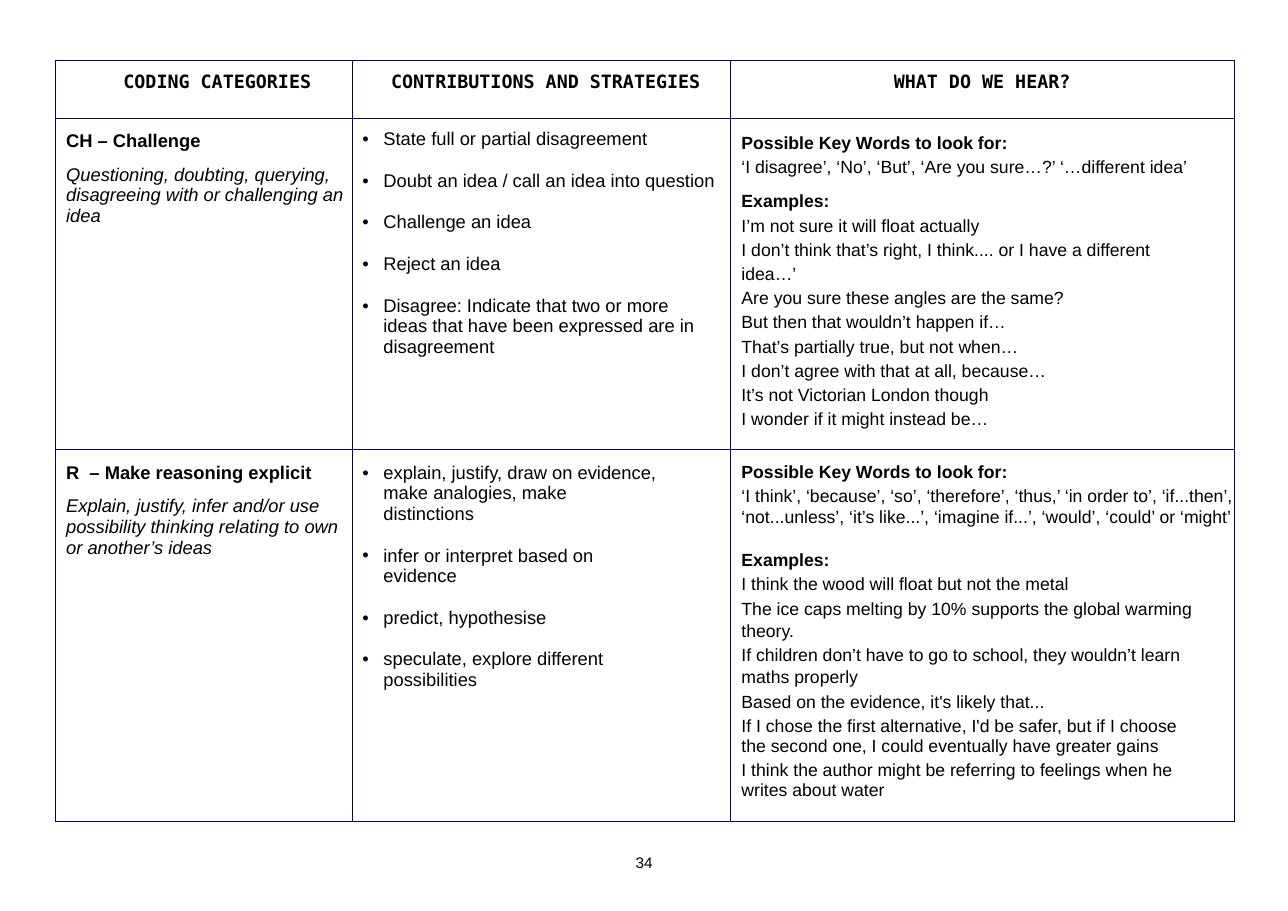
import copy
from dataclasses import dataclass

import pptx
import pptx.dml.color
import pptx.enum.text
import pptx.oxml.ns
import pptx.oxml.xmlchemy
import pptx.util
from lxml import etree
from pptx.util import Inches

qn = pptx.oxml.ns.qn
ALIGN = pptx.enum.text.PP_ALIGN


@dataclass(frozen=True)
class Theme:
    ink: str = "000000"
    rule: str = "000080"
    body_font: str = "Arial"
    heading_font: str = "DejaVu Sans Mono"
    body: float = 12
    speech: float = 11.5
    folio: float = 10


THEME = Theme()


def write(frame, text, size=THEME.body, font=THEME.body_font, bold=False, italic=False,
          align=ALIGN.LEFT, left=0.1, before=0, spacing=None, bullet=False):
    """Add one paragraph to a text frame; the first gets no space before."""
    first = not frame.text
    paragraph = frame.paragraphs[0] if first else frame.add_paragraph()
    paragraph.text = text
    paragraph.alignment = align
    properties = paragraph._p.get_or_add_pPr()
    properties.set("marL", str(Inches(left)))
    properties.set("indent", str(Inches(-0.19 if bullet else 0)))
    if bullet:
        etree.SubElement(properties, qn("a:buFont"), typeface=font)
        etree.SubElement(properties, qn("a:buChar"), char="•")
    paragraph.space_before = pptx.util.Pt(0 if first else before)
    if spacing:
        paragraph.line_spacing = spacing
    for run in paragraph.runs:
        run.font.size = pptx.util.Pt(size)
        run.font.name = font
        run.font.bold = bold
        run.font.italic = italic
        run.font.color.rgb = pptx.dml.color.RGBColor.from_string(THEME.ink)
    for line_break in paragraph._p.findall(qn("a:br")):
        line_break.append(copy.deepcopy(paragraph.runs[0]._r.rPr))


def rule_cell(cell):
    """Draw thin rules on the four sides of a cell."""
    properties = cell._tc.get_or_add_tcPr()
    for side in ("a:lnL", "a:lnR", "a:lnT", "a:lnB"):
        line = etree.SubElement(properties, qn(side), w=str(pptx.util.Pt(0.48)))
        fill = etree.SubElement(line, qn("a:solidFill"))
        etree.SubElement(fill, qn("a:srgbClr"), val=THEME.rule)


COLUMN_WIDTHS = [2.7, 3.43, 4.57]
ROW_HEIGHTS = [0.52, 3.01, 3.38]
TOP_INSETS = [[0.1, 0.1, 0.1], [0.12, 0.1, 0.14], [0.12, 0.12, 0.12]]

HEADINGS = [
    ("CODING CATEGORIES", ALIGN.LEFT, 0.62),
    ("CONTRIBUTIONS AND STRATEGIES", ALIGN.LEFT, 0.35),
    ("WHAT DO WE HEAR?", ALIGN.CENTER, 0),
]

# Key words and examples: (text, space before, line spacing)
CATEGORIES = [
    {
        "code": "CH – Challenge",
        "meaning": "Questioning, doubting, querying, disagreeing with or challenging an idea",
        "strategies": [
            "State full or partial disagreement",
            "Doubt an idea / call an idea into question",
            "Challenge an idea",
            "Reject an idea",
            "Disagree: Indicate that two or more \videas that have been expressed are in "
            "\vdisagreement",
        ],
        "key_words": [
            ("‘I disagree’, ‘No’, ‘But’, ‘Are you sure…?’ ‘…different idea’", 3.1, None),
        ],
        "examples_gap": 9.4,
        "examples": [("I’m not sure it will float actually", 3.3, None)] + [
            (sentence, 0.2, 1.22) for sentence in (
                "I don’t think that’s right, I think.... or I have a different \videa…’",
                "Are you sure these angles are the same?",
                "But then that wouldn’t happen if…",
                "That’s partially true, but not when…",
                "I don’t agree with that at all, because…",
                "It’s not Victorian London though",
                "I wonder if it might instead be…",
            )
        ],
    },
    {
        "code": "R  – Make reasoning explicit",
        "meaning": "Explain, justify, infer and/or use possibility thinking relating to own "
                   "or another’s ideas",
        "strategies": [
            "explain, justify, draw on evidence, \vmake analogies, make \vdistinctions",
            "infer or interpret based on \vevidence",
            "predict, hypothesise",
            "speculate, explore different \vpossibilities",
        ],
        "key_words": [
            ("‘I think’, ‘because’, ‘so’, ‘therefore’, ‘thus,’ ‘in order to’, ‘if...then’,",
             3, None),
            ("‘not...unless’, ‘it’s like...’, ‘imagine if...’, ‘would’, ‘could’ or ‘might’",
             0.6, None),
        ],
        "examples_gap": 15.3,
        "examples": [
            ("I think the wood will float but not the metal", 3.2, None),
            ("The ice caps melting by 10% supports the global warming \vtheory.", 1.6, 1.12),
            ("If children don’t have to go to school, they wouldn’t learn \vmaths properly",
             1.6, 1.12),
            ("Based on the evidence, it's likely that...", 1.6, 1.12),
            ("If I chose the first alternative, I'd be safer, but if I choose "
             "\vthe second one, I could eventually have greater gains", 2.4, 1.04),
            ("I think the author might be referring to feelings when he "
             "\vwrites about water", 2.1, 1.04),
        ],
    },
]

deck = pptx.Presentation()
deck.slide_width = Inches(11.69)
deck.slide_height = Inches(8.27)
slide = deck.slides.add_slide(deck.slide_layouts[6])

coding_table = slide.shapes.add_table(
    len(ROW_HEIGHTS), len(COLUMN_WIDTHS), Inches(0.5), Inches(0.55),
    Inches(sum(COLUMN_WIDTHS)), Inches(sum(ROW_HEIGHTS))).table
coding_table.first_row = False
coding_table.horz_banding = False
for column, width in zip(coding_table.columns, COLUMN_WIDTHS):
    column.width = Inches(width)
for row, height, insets in zip(coding_table.rows, ROW_HEIGHTS, TOP_INSETS):
    row.height = Inches(height)
    for cell, inset in zip(row.cells, insets):
        rule_cell(cell)
        cell.fill.background()
        cell.margin_left = cell.margin_right = cell.margin_bottom = 0
        cell.margin_top = Inches(inset)

for column_index, (heading, align, left) in enumerate(HEADINGS):
    write(coding_table.cell(0, column_index).text_frame, heading,
          font=THEME.heading_font, bold=True, align=align, left=left)

for row_index, category in enumerate(CATEGORIES, start=1):
    coding, strategies, heard = (
        coding_table.cell(row_index, index).text_frame for index in range(3))
    write(coding, category["code"], bold=True)
    write(coding, category["meaning"], italic=True, before=8.6)
    for strategy in category["strategies"]:
        write(strategies, strategy, left=0.28, before=13.8, bullet=True)
    write(heard, "Possible Key Words to look for:", size=THEME.speech, bold=True)
    for text, before, spacing in category["key_words"]:
        write(heard, text, size=THEME.speech, before=before, spacing=spacing)
    write(heard, "Examples:", size=THEME.speech, bold=True, before=category["examples_gap"])
    for text, before, spacing in category["examples"]:
        write(heard, text, size=THEME.speech, before=before, spacing=spacing)

page_number = slide.shapes.add_textbox(
    Inches(5.74), Inches(7.75), Inches(0.21), Inches(0.17)).text_frame
page_number.word_wrap = True
page_number.margin_left = page_number.margin_right = 0
page_number.margin_top = page_number.margin_bottom = 0
write(page_number, "34", size=THEME.folio, left=0.03)

deck.save("out.pptx")
